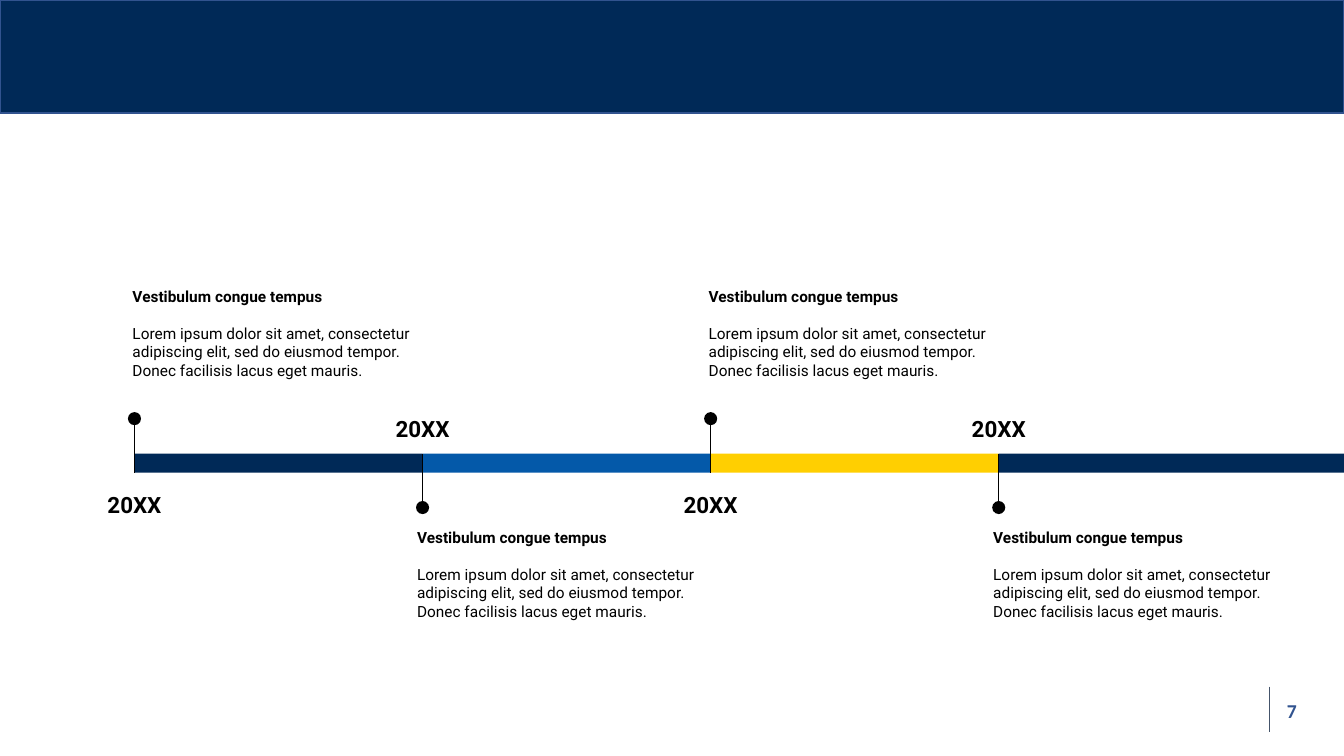
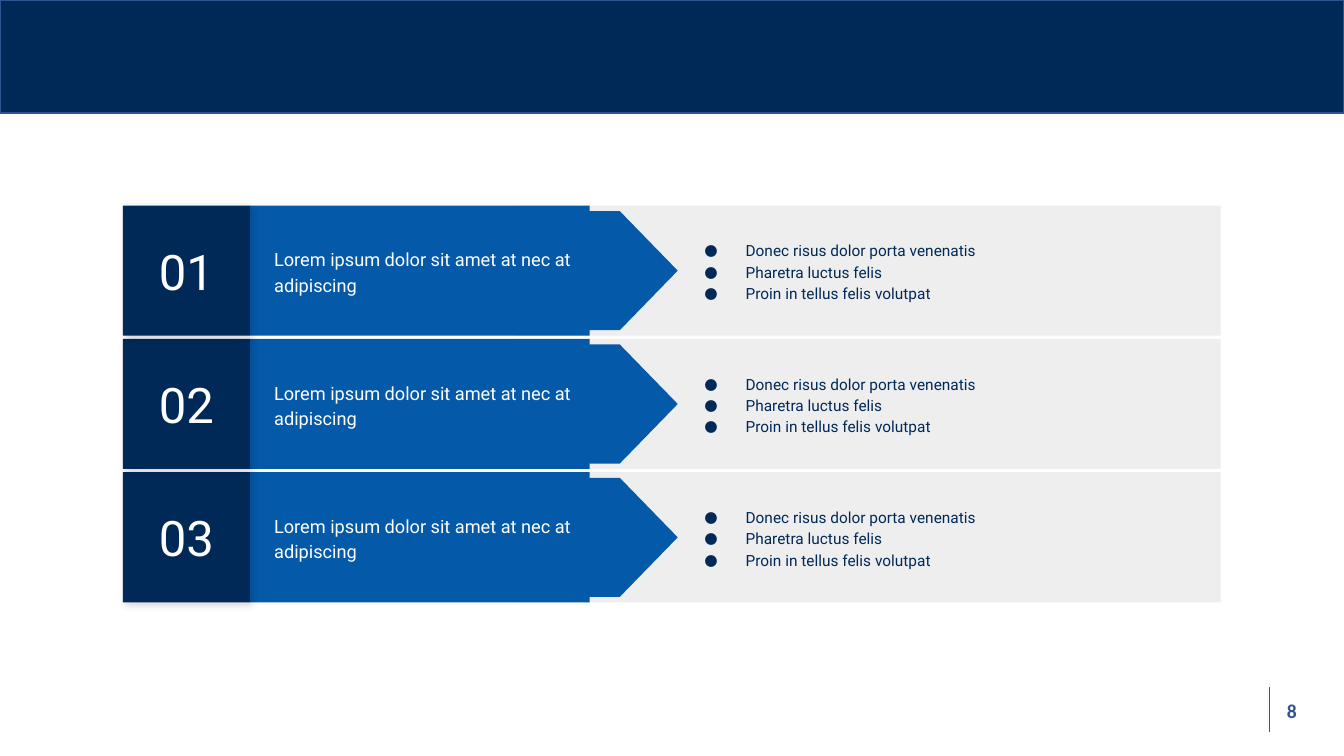
from dataclasses import dataclass
from typing import NamedTuple

from lxml import etree
from pptx import Presentation
from pptx.dml.color import RGBColor
from pptx.enum.shapes import MSO_CONNECTOR, MSO_SHAPE
from pptx.enum.text import MSO_ANCHOR, MSO_AUTO_SIZE, PP_ALIGN
from pptx.oxml import parse_xml
from pptx.oxml.ns import nsdecls, qn
from pptx.shapes.autoshape import Shape
from pptx.slide import Slide
from pptx.text.text import TextFrame
from pptx.util import Cm, Pt

RECTANGLE = MSO_SHAPE.RECTANGLE
OVAL = MSO_SHAPE.OVAL
OFFPAGE = MSO_SHAPE.FLOWCHART_OFFPAGE_CONNECTOR
STRAIGHT = MSO_CONNECTOR.STRAIGHT
TOP, MIDDLE = MSO_ANCHOR.TOP, MSO_ANCHOR.MIDDLE
LEFT, CENTER = PP_ALIGN.LEFT, PP_ALIGN.CENTER
NO_AUTOFIT = MSO_AUTO_SIZE.NONE
COMPARISON_LAYOUT, BLANK_LAYOUT = 4, 6


@dataclass(frozen=True)
class Theme:
    navy: str = "002957"
    blue: str = "0459A9"
    yellow: str = "FFCF01"
    gray: str = "EEEEEE"
    black: str = "000000"
    white: str = "FFFFFF"
    outline: str = "31538F"
    divider: str = "44546A"
    font: str = "Roboto"
    page_font: str = "Calibri"
    body_size: float = 11
    label_size: float = 13
    page_size: float = 14
    year_size: float = 16
    number_size: float = 35


THEME = Theme()
SLIDE_WIDTH, SLIDE_HEIGHT = 33.87, 19.05
INSET = 0.33


class Box(NamedTuple):
    left: float
    top: float
    width: float
    height: float


class Style(NamedTuple):
    size: float
    color: str
    bold: bool = False
    font: str = THEME.font
    align: PP_ALIGN = LEFT
    spacing: float = 1.0
    after: float = 0


class Milestone(NamedTuple):
    year: str
    heading: str
    text: str
    color: str


class Side(NamedTuple):
    direction: int
    card_left: float
    card_top: float
    year_top: float


class Step(NamedTuple):
    number: str
    label: str
    points: tuple[str, ...]


HEADING = Style(THEME.body_size, THEME.black, bold=True, after=13)
CARD_TEXT = Style(THEME.body_size, THEME.black)
YEAR = Style(THEME.year_size, THEME.black, bold=True, align=CENTER, spacing=1.15)
PAGE = Style(THEME.page_size, THEME.outline, bold=True, font=THEME.page_font)
LABEL = Style(THEME.label_size, THEME.white, spacing=1.15)
NUMBER = Style(THEME.number_size, THEME.white, align=CENTER)
POINT = Style(THEME.body_size, THEME.navy, spacing=1.15)

ABOVE = Side(-1, -0.38, 6.91, 11.94)
BELOW = Side(1, -0.47, 12.98, 10.03)

MILESTONES = [
    Milestone(
        "20XX",
        "Vestibulum congue tempus",
        "Lorem ipsum dolor sit amet, consectetur adipiscing elit, "
        "sed do eiusmod tempor. Donec facilisis lacus eget mauris.",
        color,
    )
    for color in (THEME.navy, THEME.blue, THEME.yellow, THEME.navy)
]
STEPS = [
    Step(
        number,
        "Lorem ipsum dolor sit amet at nec at adipiscing",
        (
            "Donec risus dolor porta venenatis",
            "Pharetra luctus felis",
            "Proin in tellus felis volutpat",
        ),
    )
    for number in ("01", "02", "03")
]


def rgb(color: str) -> RGBColor:
    return RGBColor.from_string(color)


def add_block(slide: Slide, kind: MSO_SHAPE, box: Box, color: str) -> Shape:
    block = slide.shapes.add_shape(kind, *map(Cm, box))
    block.shadow.inherit = False
    block.fill.solid()
    block.fill.fore_color.rgb = rgb(color)
    block.line.fill.background()
    return block


def add_rule(slide: Slide, x: float, top: float, bottom: float, color: str) -> None:
    rule = slide.shapes.add_connector(STRAIGHT, Cm(x), Cm(top), Cm(x), Cm(bottom))
    rule.line.color.rgb = rgb(color)
    rule.line.width = Pt(0.75)
    etree.SubElement(rule.element.spPr, qn("a:effectLst"))


def add_bullet(paragraph) -> None:
    properties = paragraph._p.get_or_add_pPr()
    properties.set("marL", str(Cm(1.7)))
    properties.set("indent", str(Cm(-1.04)))
    color = etree.SubElement(properties, qn("a:buClr"))
    etree.SubElement(color, qn("a:srgbClr"), val=THEME.navy)
    etree.SubElement(properties, qn("a:buFont"), typeface=THEME.font)
    etree.SubElement(properties, qn("a:buChar"), char="●")


def write(
    frame: TextFrame,
    lines: list[tuple[str, Style]],
    anchor: MSO_ANCHOR = TOP,
    inset_x: float = INSET,
    inset_y: float = INSET,
    bulleted: bool = False,
) -> None:
    frame.word_wrap = True
    frame.auto_size = NO_AUTOFIT
    frame.vertical_anchor = anchor
    frame.margin_left = frame.margin_right = Cm(inset_x)
    frame.margin_top = frame.margin_bottom = Cm(inset_y)
    for index, (text, style) in enumerate(lines):
        paragraph = frame.add_paragraph() if index else frame.paragraphs[0]
        paragraph.text = text
        if bulleted:
            add_bullet(paragraph)
        paragraph.alignment = style.align
        paragraph.line_spacing = style.spacing
        paragraph.space_before = Pt(0)
        paragraph.space_after = Pt(style.after)
        font = paragraph.font
        font.name = style.font
        font.size = Pt(style.size)
        font.bold = style.bold
        font.color.rgb = rgb(style.color)


def add_text(slide: Slide, box: Box, lines: list[tuple[str, Style]], **options) -> None:
    write(slide.shapes.add_textbox(*map(Cm, box)).text_frame, lines, **options)


def add_frame(slide: Slide, page: str) -> None:
    band = add_block(slide, RECTANGLE, Box(0, 0, SLIDE_WIDTH, 2.85), THEME.navy)
    band.line.color.rgb = rgb(THEME.outline)
    band.line.width = Pt(1)
    add_rule(slide, 32, 17.3, 18.44, THEME.divider)
    page_box = Box(32.18, 17.48, 1.22, 0.71)
    add_text(slide, page_box, [(page, PAGE)], inset_x=0.25, inset_y=0.13)


def add_milestone(
    slide: Slide, milestone: Milestone, side: Side, x: float, width: float
) -> None:
    bar_top, bar_height, dot = 11.43, 0.48, 0.33
    bar_middle = bar_top + bar_height / 2
    dot_y = bar_middle + side.direction * 1.12
    bar_far_edge = bar_middle - side.direction * bar_height / 2
    year_width = 2.77

    add_block(slide, RECTANGLE, Box(x, bar_top, width, bar_height), milestone.color)
    add_rule(slide, x, dot_y, bar_far_edge, THEME.black)
    dot_box = Box(x - dot / 2, dot_y - dot / 2, dot, dot)
    add_block(slide, OVAL, dot_box, THEME.black)
    year_box = Box(x - year_width / 2, side.year_top, year_width, 1.37)
    add_text(slide, year_box, [(milestone.year, YEAR)])
    card_box = Box(x + side.card_left, side.card_top, 8.36, 3.5)
    card = [(milestone.heading, HEADING), (milestone.text, CARD_TEXT)]
    add_text(slide, card_box, card)


def build_timeline(slide: Slide) -> None:
    start, pitch = 3.39, 7.26
    last = len(MILESTONES) - 1
    for index, milestone in enumerate(MILESTONES):
        x = start + index * pitch
        width = SLIDE_WIDTH - x if index == last else pitch
        add_milestone(slide, milestone, BELOW if index % 2 else ABOVE, x, width)


def add_soft_shadow(block: Shape) -> None:
    effects = block.element.spPr.find(qn("a:effectLst"))
    effects.append(
        parse_xml(
            f'<a:outerShdw {nsdecls("a")} blurRad="{Pt(5.6)}" dist="{Pt(2.2)}" '
            f'dir="2700000" algn="tl" rotWithShape="0"><a:srgbClr val="{THEME.black}">'
            '<a:alpha val="17000"/></a:srgbClr></a:outerShdw>'
        )
    )


def add_step(slide: Slide, step: Step, points: Shape, top: float) -> None:
    height = 3.28
    middle = top + height / 2
    arrow_breadth, arrow_length, arrow_center = 3, 7.3, 13.43

    add_block(slide, RECTANGLE, Box(13, top, 17.76, height), THEME.gray)
    add_block(slide, RECTANGLE, Box(6.3, top, 8.56, height), THEME.blue)
    arrow_box = Box(
        arrow_center - arrow_breadth / 2,
        middle - arrow_length / 2,
        arrow_breadth,
        arrow_length,
    )
    add_block(slide, OFFPAGE, arrow_box, THEME.blue).rotation = 270
    label_box = Box(6.58, middle - 1.27, 9.02, 2.54)
    add_text(slide, label_box, [(step.label, LABEL)], anchor=MIDDLE)

    number = add_block(slide, RECTANGLE, Box(3.1, top, 3.2, height), THEME.navy)
    add_soft_shadow(number)
    write(number.text_frame, [(step.number, NUMBER)], anchor=MIDDLE)

    points_box = Box(16.76, top, 13.13, height)
    points.left, points.top, points.width, points.height = map(Cm, points_box)
    lines = [(point, POINT) for point in step.points]
    write(points.text_frame, lines, anchor=MIDDLE, bulleted=True)
    points.element.getparent().append(points.element)


def build_steps(slide: Slide) -> None:
    first_top, pitch = 5.18, 3.36
    title, *bodies = list(slide.placeholders)
    for unused in (title, *bodies[len(STEPS):]):
        unused.element.getparent().remove(unused.element)
    rows = list(enumerate(zip(STEPS, bodies)))
    for index, (step, points) in reversed(rows):
        add_step(slide, step, points, first_top + index * pitch)


def main() -> None:
    deck = Presentation()
    deck.slide_width, deck.slide_height = Cm(SLIDE_WIDTH), Cm(SLIDE_HEIGHT)
    pages = (
        ("7", BLANK_LAYOUT, build_timeline),
        ("8", COMPARISON_LAYOUT, build_steps),
    )
    for page, layout, build in pages:
        slide = deck.slides.add_slide(deck.slide_layouts[layout])
        add_frame(slide, page)
        build(slide)
    deck.save("out.pptx")


if __name__ == "__main__":
    main()
